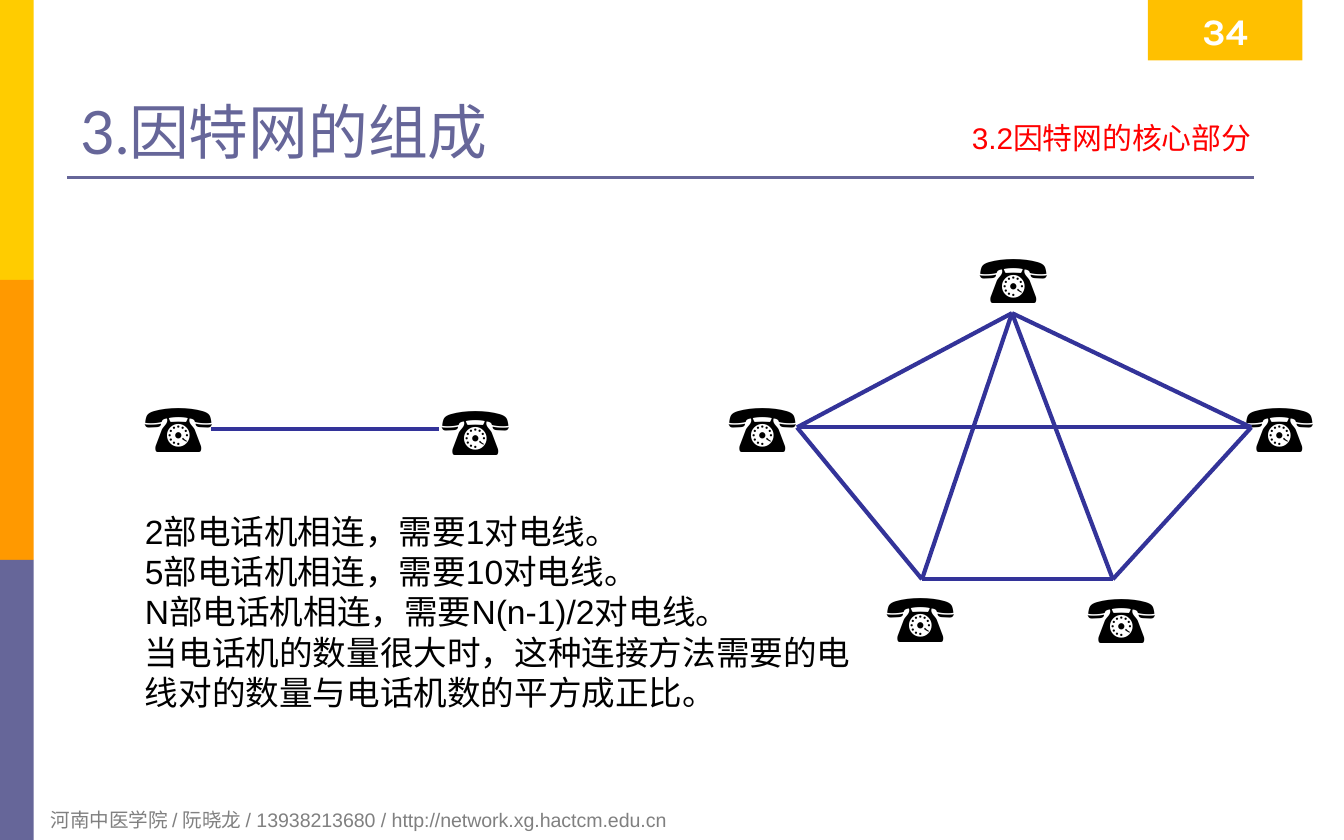
from lxml import etree
from pptx import Presentation
from pptx.dml.color import RGBColor
from pptx.enum.shapes import MSO_CONNECTOR, MSO_SHAPE
from pptx.enum.text import MSO_ANCHOR, PP_ALIGN
from pptx.oxml.ns import qn
from pptx.util import Inches, Pt

RECT, STRAIGHT = MSO_SHAPE.RECTANGLE, MSO_CONNECTOR.STRAIGHT
TOP, MIDDLE, BOTTOM = MSO_ANCHOR.TOP, MSO_ANCHOR.MIDDLE, MSO_ANCHOR.BOTTOM
LEFT, CENTER, RIGHT = PP_ALIGN.LEFT, PP_ALIGN.CENTER, PP_ALIGN.RIGHT
SLATE, NAVY = "666699", "333399"

prs = Presentation()
prs.slide_width, prs.slide_height = Inches(10), Inches(6.25)
s = prs.slides.add_slide(prs.slide_layouts[6])


def add_text(box, lines, size, font, color, align=LEFT, anchor=TOP, fill=None):
    """Add a text box, or a filled rectangle when a fill colour is given."""
    box = [Inches(v) for v in box]
    if fill:
        sp = s.shapes.add_shape(RECT, *box)
        sp.shadow.inherit = False
        sp.fill.solid()
        sp.fill.fore_color.rgb = RGBColor.from_string(fill)
        sp.line.fill.background()
    else:
        sp = s.shapes.add_textbox(*box)
    tf = sp.text_frame
    tf.word_wrap = True
    tf.vertical_anchor = anchor
    for i, line in enumerate(lines):
        p = tf.add_paragraph() if i else tf.paragraphs[0]
        p.alignment = align
        r = p.add_run()
        r.text = line
        for name, value in {"size": Pt(size), "name": font, "bold": bool(fill)}.items():
            setattr(r.font, name, value)
        r.font.color.rgb = RGBColor.from_string(color)


def add_line(start, end, color, width):
    c = s.shapes.add_connector(STRAIGHT, *[Inches(v) for v in (*start, *end)])
    c.line.color.rgb = RGBColor.from_string(color)
    c.line.width = Pt(width)
    etree.SubElement(c._element.spPr, qn("a:effectLst"))


# Side band and title rule
band_h = 6.25 / 3
for i, color in enumerate(["FFCC00", "FF9900", SLATE]):
    add_text((0, i * band_h, 0.25, band_h), [], 18, "Arial", "FFFFFF", fill=color)
add_line((0.5, 1.32), (9.33, 1.32), SLATE, 1.5)

# Headings, page number and footer
add_text((0.28, 5.96, 6.77, 0.28),
         ["河南中医学院 / 阮晓龙 / 13938213680 / http://network.xg.hactcm.edu.cn"],
         10.5, "Arial", "808080")
add_text((0.5, 0.25, 9, 1.04), ["3.因特网的组成"], 32, "Lato", SLATE, anchor=BOTTOM)
add_text((8.54, 0, 1.15, 0.45), ["34"], 20, "Karla", "FFFFFF", CENTER, MIDDLE, "FFC000")
add_text((6.26, 0.84, 3.15, 0.39), ["3.2因特网的核心部分"], 16, "Arial", "FF0000", RIGHT)

# Telephones: the pair on the left, then the five on the right
phones = [(0.98, 2.82), (3.19, 2.84),
          (5.32, 2.82), (6.5, 4.23), (9.17, 2.82), (7.99, 4.24), (7.19, 1.71)]
for x, y in phones:
    add_text((x, y, 0.87, 0.7), ["☎"], 36, "Times New Roman", "000000")

# Wires
add_line((1.57, 3.19), (3.27, 3.19), NAVY, 2.25)
top, west, east = (7.53, 2.33), (5.93, 3.18), (9.31, 3.18)
south_west, south_east = (6.86, 4.31), (8.28, 4.31)
wires = [(west, top), (top, east), (west, south_west), (south_west, south_east),
         (south_east, east), (top, south_east), (top, south_west), (west, east)]
for start, end in wires:
    add_line(start, end, NAVY, 2.25)

# Explanation
add_text((0.98, 3.75, 5.63, 1.62), [
    "2部电话机相连，需要1对电线。",
    "5部电话机相连，需要10对电线。",
    "N部电话机相连，需要N(n-1)/2对电线。",
    "当电话机的数量很大时，这种连接方法需要的电线对的数量与电话机数的平方成正比。",
], 18, "Arial", "000000")

prs.save("out.pptx")
